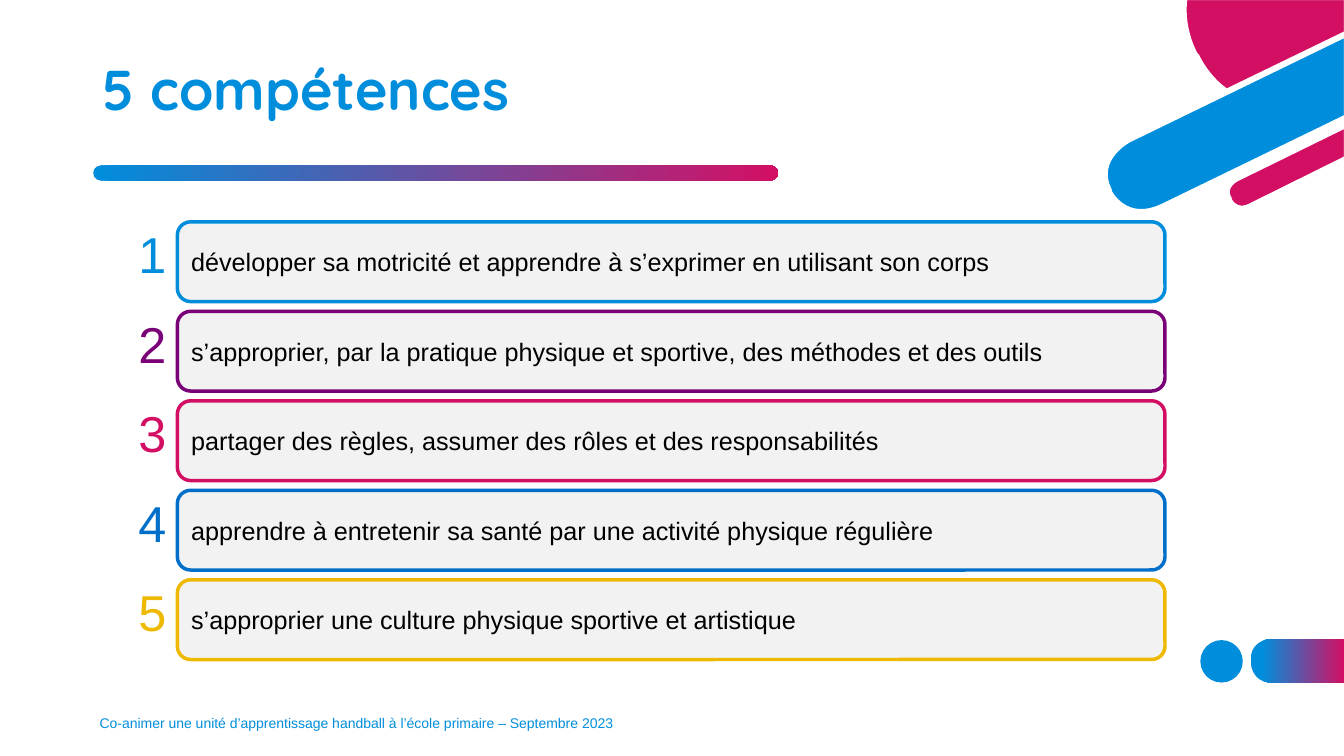
from pptx import Presentation
from pptx.dml.color import RGBColor
from pptx.enum.shapes import MSO_SHAPE as Shape
from pptx.enum.text import MSO_ANCHOR as Anchor, PP_ALIGN as Align
from pptx.util import Cm, Pt

BLUE, PINK, WHITE, GREY, BLACK = "008EDC", "D30F64", "FFFFFF", "F2F2F2", "000000"
TITLE = "5 compétences"
FOOTER = "Co-animer une unité d’apprentissage handball à l’école primaire – Septembre 2023"
SKILLS = [
    ("développer sa motricité et apprendre à s’exprimer en utilisant son corps", BLUE),
    ("s’approprier, par la pratique physique et sportive, des méthodes et des outils", "7A0078"),
    ("partager des règles, assumer des rôles et des responsabilités", PINK),
    ("apprendre à entretenir sa santé par une activité physique régulière", "006FC9"),
    ("s’approprier une culture physique sportive et artistique", "EEB902"),
]
# Outlines in cm: a pair is a straight step, six numbers are a Bézier curve
DISC = [(30.18, 1.42), (30.18, 1.42, 30.4, 1.93, 30.91, 2.29), (33.92, 0.83),
        (33.92, -0.05), (29.87, -0.05), (29.82, 0.38, 29.87, 0.84, 30.12, 1.35)]
WIDE_BAR = [(28.47, 3.53), (28.47, 3.53, 27.56, 3.99, 27.97, 4.8), (27.97, 4.83),
            (27.97, 4.83, 28.37, 5.64, 29.31, 5.18), (33.92, 2.94), (33.92, 0.88)]
THIN_BAR = [(31.17, 4.52), (31.17, 4.52, 30.81, 4.7, 30.99, 5), (30.99, 5.03),
            (30.99, 5.03, 31.14, 5.36, 31.5, 5.18), (33.92, 3.98), (33.92, 3.17)]
PILL = [(32.05, 16.1), (32.05, 16.1, 31.52, 16.1, 31.52, 16.63), (31.52, 16.67),
        (31.52, 16.67, 31.52, 17.2, 32.05, 17.2), (33.87, 17.2), (33.87, 16.1)]
ROW_TOP, ROW_STEP = 5.59, 2.255
CURVE_STEPS = 16


def color(code):
    return RGBColor.from_string(code)


def paint(shape, fill, line=None, width=0):
    """Fill with one colour, or with a gradient given as (position, colour) stops."""
    shape.shadow.inherit = False
    if isinstance(fill, str):
        shape.fill.solid()
        shape.fill.fore_color.rgb = color(fill)
    else:
        shape.fill.gradient()
        shape.fill.gradient_angle = 0
        for stop, (position, code) in zip(shape.fill.gradient_stops, fill):
            stop.position = position
            stop.color.rgb = color(code)
    if line:
        shape.line.color.rgb = color(line)
        shape.line.width = Pt(width)
    else:
        shape.line.fill.background()


def add_preset(kind, left, top, width, height):
    return page.shapes.add_shape(kind, Cm(left), Cm(top), Cm(width), Cm(height))


def add_outline(steps):
    """Draw a closed outline, turning each curve into short straight lines."""
    points = [steps[0]]
    for step in steps[1:]:
        if len(step) == 2:
            points.append(step)
            continue
        nodes = [points[-1], step[:2], step[2:4], step[4:]]
        for i in range(1, CURVE_STEPS + 1):
            t = i / CURVE_STEPS
            weights = ((1 - t) ** 3, 3 * t * (1 - t) ** 2, 3 * t * t * (1 - t), t ** 3)
            points.append(tuple(sum(w * node[axis] for w, node in zip(weights, nodes))
                                for axis in (0, 1)))
    points = [(Cm(x), Cm(y)) for x, y in points]
    builder = page.shapes.build_freeform(*points[0])
    builder.add_line_segments(points[1:], close=True)
    return builder.convert_to_shape()


def write(shape, text, size, code, font="Arial", bold=False, align=Align.LEFT,
          anchor=Anchor.MIDDLE, wrap=True):
    frame = shape.text_frame
    frame.word_wrap = wrap
    frame.vertical_anchor = anchor
    para = frame.paragraphs[0]
    para.alignment = align
    span = para.add_run()
    span.text = text
    span.font.size = Pt(size)
    span.font.name = font
    span.font.bold = bold
    span.font.color.rgb = color(code)
    return para


def add_text(left, top, width, height, *content, **style):
    box = page.shapes.add_textbox(Cm(left), Cm(top), Cm(width), Cm(height))
    return write(box, *content, **style)


deck = Presentation()
deck.slide_width, deck.slide_height = Cm(33.87), Cm(19.05)
page = deck.slides.add_slide(deck.slide_layouts[6])

paint(add_preset(Shape.OVAL, 30.25, 16.13, 1.07, 1.07), BLUE)
paint(add_outline(PILL), [(0.12, BLUE), (1, PINK)])
for outline, fill in ((DISC, PINK), (THIN_BAR, PINK), (WIDE_BAR, BLUE)):
    paint(add_outline(outline), fill, WHITE, 3)

rule = add_preset(Shape.ROUNDED_RECTANGLE, 2.35, 4.17, 17.26, 0.38)
rule.adjustments[0] = 0.5
paint(rule, [(0, BLUE), (1, PINK)])

heading = add_text(2.34, 1.02, 25.15, 2.62, TITLE, 40, BLUE, font="Quicksand", bold=True)
heading.line_spacing = 0.9

for index, (skill, accent) in enumerate(SKILLS):
    top = ROW_TOP + index * ROW_STEP
    row = add_preset(Shape.ROUNDED_RECTANGLE, 4.47, top, 24.89, 2.01)
    paint(row, GREY, accent, 2.5)
    write(row, skill, 18, BLACK).space_before = Pt(10)
    add_text(3.23, top - 0.08, 1.22, 1.8, str(index + 1), 36, accent,
             align=Align.CENTER, anchor=Anchor.TOP, wrap=False)

add_text(2.26, 17.7, 13.54, 1.02, FOOTER, 10, BLUE)

deck.save("out.pptx")
